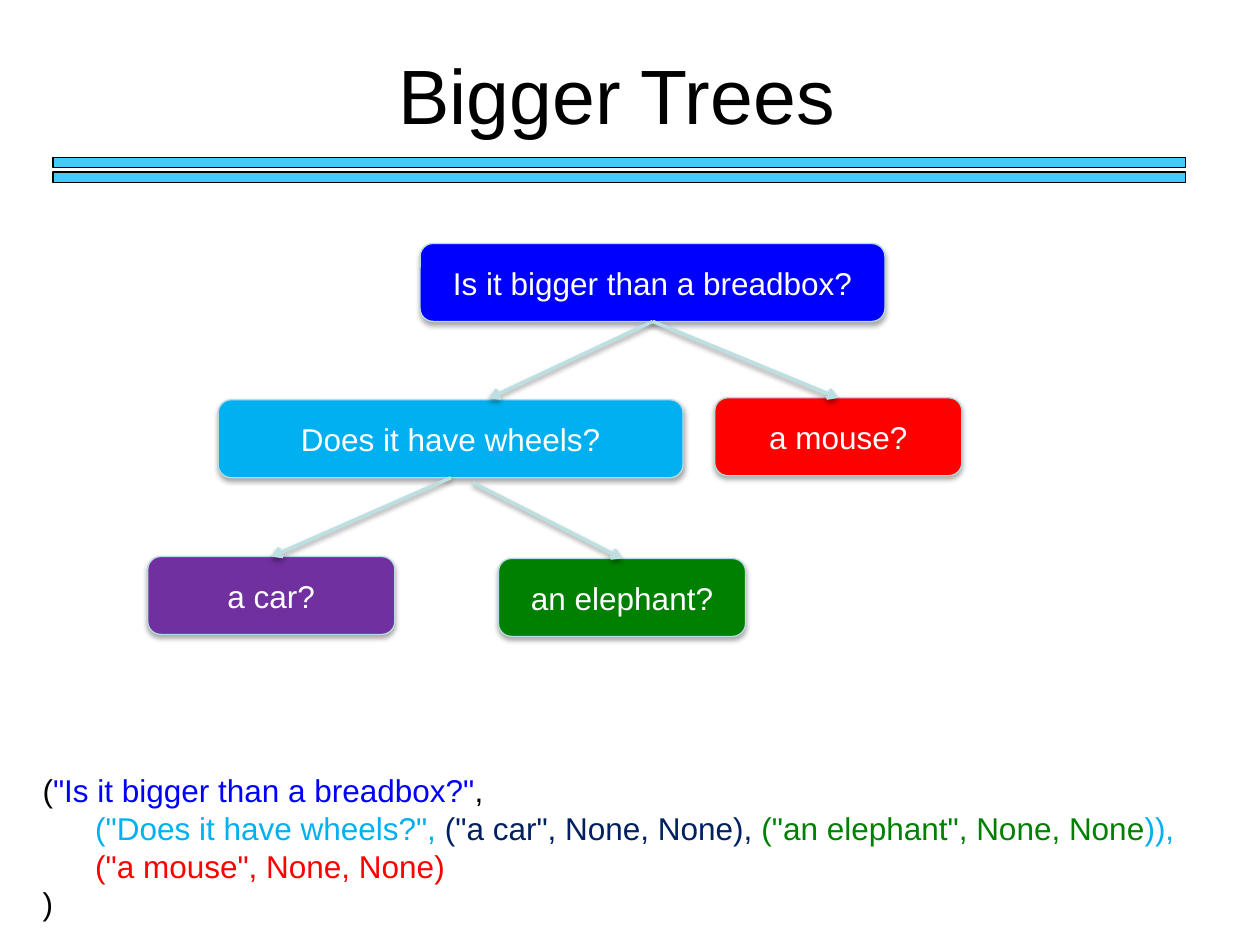
import pptx
import pptx.dml.color
import pptx.enum.shapes
import pptx.enum.text
import pptx.oxml
import pptx.oxml.ns
import pptx.util

Cm = pptx.util.Cm
Pt = pptx.util.Pt
SHAPES = pptx.enum.shapes.MSO_SHAPE
ALIGN = pptx.enum.text.PP_ALIGN
MIDDLE = pptx.enum.text.MSO_ANCHOR.MIDDLE

COLORS = {
    "black": "000000", "white": "FFFFFF", "rule": "42CBFD",
    "outline": "B7DBDE", "arrow": "BCDFE2", "blue": "0000FF",
    "sky": "00B0F0", "purple": "7030A0", "navy": "002060",
    "red": "FF0000", "green": "008000",
}
RGB = {name: pptx.dml.color.RGBColor.from_string(code) for name, code in COLORS.items()}


def write(paragraph, text, size=18, color="black", align=ALIGN.LEFT):
    paragraph.alignment = align
    run = paragraph.add_run()
    run.text = text
    run.font.name = "Arial"
    run.font.size = Pt(size)
    run.font.color.rgb = RGB[color]


def add_shadow(shape, opacity, distance):
    effects = pptx.oxml.parse_xml(
        f'<a:effectLst {pptx.oxml.ns.nsdecls("a")}>'
        f'<a:outerShdw blurRad="{Pt(3.1)}" dist="{Pt(distance)}" dir="5400000" rotWithShape="0">'
        f'<a:srgbClr val="{COLORS["black"]}"><a:alpha val="{opacity * 1000}"/></a:srgbClr>'
        '</a:outerShdw></a:effectLst>')
    shape._element.spPr.append(effects)


presentation = pptx.Presentation()
presentation.slide_width, presentation.slide_height = Cm(25.4), Cm(19.05)
slide = presentation.slides.add_slide(presentation.slide_layouts[6])

# Title
title = slide.shapes.add_textbox(Cm(1.07), Cm(0.84), Cm(22.83), Cm(2.11)).text_frame
title.word_wrap = True
title.vertical_anchor = MIDDLE
title.margin_left = title.margin_top = title.margin_bottom = Cm(0.15)
write(title.paragraphs[0], "Bigger Trees", size=44, align=ALIGN.CENTER)

# Double rule under the title
for top in (3.17, 3.47):
    rule = slide.shapes.add_shape(SHAPES.RECTANGLE, Cm(1.07), Cm(top), Cm(22.83), Cm(0.21))
    rule.shadow.inherit = False
    rule.fill.solid()
    rule.fill.fore_color.rgb = RGB["rule"]
    rule.line.color.rgb = RGB["black"]
    rule.line.width = Pt(0.75)

# Tree nodes: text, left, top, width, fill
QUESTION, ANSWER, NODE_HEIGHT = 9.37, 4.98, 1.57
nodes = [
    ("Is it bigger than a breadbox?", 8.47, 4.91, QUESTION, "blue"),
    ("a car?", 2.98, 11.22, ANSWER, "purple"),
    ("a mouse?", 14.41, 8.02, ANSWER, "red"),
    ("Does it have wheels?", 4.4, 8.06, QUESTION, "sky"),
    ("an elephant?", 10.05, 11.26, ANSWER, "green"),
]
for text, left, top, width, color in nodes:
    node = slide.shapes.add_shape(
        SHAPES.ROUNDED_RECTANGLE, Cm(left), Cm(top), Cm(width), Cm(NODE_HEIGHT))
    node.fill.solid()
    node.fill.fore_color.rgb = RGB[color]
    node.line.color.rgb = RGB["outline"]
    node.line.width = Pt(0.75)
    add_shadow(node, opacity=35, distance=1.8)
    node.text_frame.vertical_anchor = MIDDLE
    write(node.text_frame.paragraphs[0], text, color="white", align=ALIGN.CENTER)

# Branches from each question to its two children
branches = [
    (13.16, 6.48, 9.86, 8.03),
    (13.16, 6.48, 16.9, 8.02),
    (9.09, 9.63, 5.47, 11.22),
    (9.53, 9.73, 12.54, 11.26),
]
for ends in branches:
    branch = slide.shapes.add_connector(
        pptx.enum.shapes.MSO_CONNECTOR.STRAIGHT, *map(Cm, ends))
    branch.line.color.rgb = RGB["arrow"]
    branch.line.width = Pt(2)
    branch.line._get_or_add_ln().append(pptx.oxml.parse_xml(
        f'<a:tailEnd {pptx.oxml.ns.nsdecls("a")} type="arrow"/>'))
    add_shadow(branch, opacity=38, distance=1.6)

# The same tree as nested tuples: indent, then coloured pieces
tuple_lines = [
    (0, [("(", "black"), ('"Is it bigger than a breadbox?"', "blue"), (",", "black")]),
    (1.06, [('("Does it have wheels?", ', "sky"), ('("a car", None, None), ', "navy"),
            ('("an elephant", None, None', "green"), (")),", "sky")]),
    (1.06, [('("a mouse", None, None)', "red")]),
    (0, [(")", "black")]),
]
code = slide.shapes.add_textbox(Cm(0.61), Cm(15.42), Cm(23.5), Cm(3.33)).text_frame
code.word_wrap = False
code.auto_size = pptx.enum.text.MSO_AUTO_SIZE.SHAPE_TO_FIT_TEXT
for number, (indent, pieces) in enumerate(tuple_lines):
    line = code.add_paragraph() if number else code.paragraphs[0]
    line._p.get_or_add_pPr().set("marL", str(Cm(indent)))
    for text, color in pieces:
        write(line, text, color=color)

presentation.save("out.pptx")
